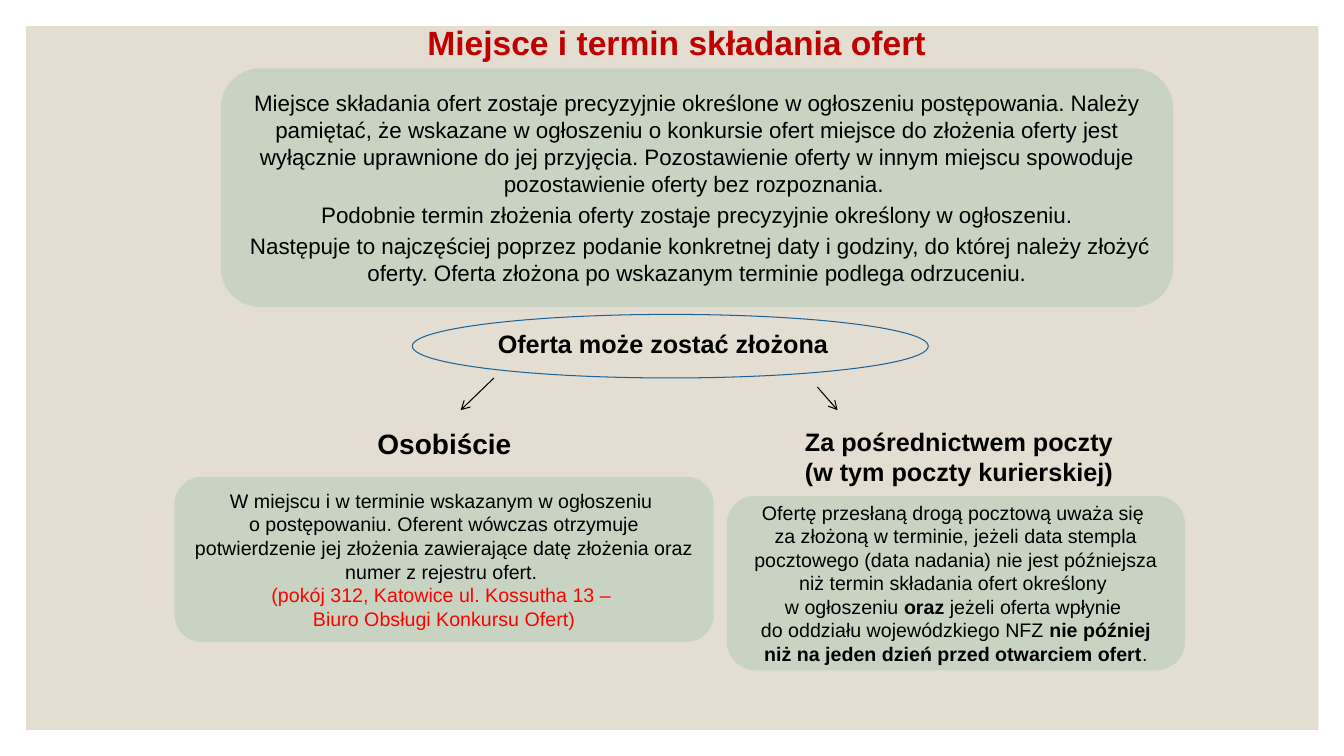
from copy import deepcopy

from lxml.etree import SubElement
from pptx import Presentation
from pptx.dml.color import RGBColor as RGB
from pptx.enum.shapes import MSO_CONNECTOR as Conn, MSO_SHAPE as Geo
from pptx.enum.text import MSO_ANCHOR as Anchor, MSO_AUTO_SIZE as Auto, PP_ALIGN as Align
from pptx.oxml.ns import qn
from pptx.util import Pt

HEX = {
    "panel": "E3DED1", "green": "339966", "blue": "1D6294",
    "title": "C00000", "red": "FF0000", "black": "000000",
}


def write(para, text, size=14, color="black", bold=False, font="Arial"):
    """Add formatted text to a paragraph, turning newlines into line breaks."""
    for num, part in enumerate(text.split("\n")):
        run = para.add_run()
        run.text = part
        run.font.name, run.font.size, run.font.bold = font, Pt(size), bold
        run.font.color.rgb = RGB.from_string(HEX[color])
        if num:
            para.add_line_break()
            gap = para._p[-1]
            gap.append(deepcopy(run._r.rPr))
            run._r.addprevious(gap)
        if not part:
            para._p.remove(run._r)


class Page:
    """Holds the slide style and draws each kind of element."""

    def __init__(self, deck):
        """Add a title-only slide to the deck."""
        self.slide = deck.slides.add_slide(deck.slide_layouts[5])
        self.shapes = self.slide.shapes

    def fill(self, frame, paras, size, align=Align.CENTER, anchor=Anchor.TOP, wrap=True):
        """Write paragraphs, each a list of (text, format) pairs, into a frame."""
        frame.word_wrap, frame.vertical_anchor = wrap, anchor
        for num, runs in enumerate(paras):
            para = frame.add_paragraph() if num else frame.paragraphs[0]
            para.alignment, para.space_before = align, Pt(size * 0.2)
            for text, style in runs:
                write(para, text, size=size, **style)

    def shape(self, geo, box, fill=None, alpha=None, line=None):
        """Draw a preset shape."""
        item = self.shapes.add_shape(geo, *map(Pt, box))
        item.shadow.inherit = False
        if fill:
            item.fill.solid()
            item.fill.fore_color.rgb = RGB.from_string(HEX[fill])
        else:
            item.fill.background()
        if alpha:
            tint = item.element.spPr.find(f"{qn('a:solidFill')}/{qn('a:srgbClr')}")
            SubElement(tint, qn("a:alpha")).set("val", str(alpha * 1000))
        if line:
            item.line.color.rgb = RGB.from_string(HEX[line])
            item.line.width = Pt(0.75)
        else:
            item.line.fill.background()
        return item

    def title(self, text, box):
        """Place and format the title."""
        item = self.shapes.title
        item.left, item.top, item.width, item.height = map(Pt, box)
        self.fill(item.text_frame, [[(text, {"color": "title", "bold": True})]], 24,
                  align=Align.LEFT, wrap=False)
        item.text_frame.auto_size = Auto.SHAPE_TO_FIT_TEXT

    def panel(self, box):
        """Draw the backdrop behind the title."""
        item = self.shape(Geo.RECTANGLE, box, fill="panel")
        self.shapes.title.element.addprevious(item.element)

    def card(self, box, paras, size=14):
        """Draw a rounded translucent card with text."""
        item = self.shape(Geo.ROUNDED_RECTANGLE, box, fill="green", alpha=15)
        self.fill(item.text_frame, paras, size, anchor=Anchor.MIDDLE)

    def oval(self, box, text):
        """Draw an outlined ellipse with a bold caption."""
        item = self.shape(Geo.OVAL, box, line="blue")
        self.fill(item.text_frame, [[(text, {"bold": True})]], 18, align=Align.LEFT)

    def label(self, box, text, size, wrap=True):
        """Add a bold centred heading."""
        frame = self.shapes.add_textbox(*map(Pt, box)).text_frame
        self.fill(frame, [[(text, {"bold": True})]], size, wrap=wrap)
        frame.auto_size = Auto.SHAPE_TO_FIT_TEXT

    def arrow(self, *ends):
        """Draw a thin arrow."""
        item = self.shapes.add_connector(Conn.STRAIGHT, *map(Pt, ends))
        item.line.color.rgb = RGB.from_string(HEX["black"])
        item.line.width = Pt(0.75)
        SubElement(item.line._get_or_add_ln(), qn("a:tailEnd")).set("type", "arrow")
        SubElement(item.element.spPr, qn("a:effectLst"))


def main():
    """Build and save the slide."""
    deck = Presentation()
    deck.slide_width, deck.slide_height = Pt(960), Pt(540)
    page = Page(deck)
    bold = {"bold": True}

    page.title("Miejsce i termin składania ofert", (298, 12.2, 381, 36))
    page.panel((18.7, 18.7, 923, 502.6))
    page.card((157.6, 48.8, 680.4, 170.6), [
        [("Miejsce składania ofert zostaje precyzyjnie określone w ogłoszeniu postępowania. "
          "Należy pamiętać, że wskazane w ogłoszeniu o konkursie ofert miejsce do złożenia "
          "oferty jest wyłącznie uprawnione do jej przyjęcia. Pozostawienie oferty w innym "
          "miejscu spowoduje pozostawienie oferty bez rozpoznania. ", {})],
        [("Podobnie termin złożenia oferty zostaje precyzyjnie określony w ogłoszeniu.", {})],
        [(" Następuje to najczęściej poprzez podanie konkretnej daty i godziny, do której "
          "należy złożyć oferty. Oferta złożona po wskazanym terminie podlega odrzuceniu.", {})],
    ], size=16)
    page.oval((294.5, 224.6, 368.6, 45.4), "Oferta może zostać złożona")

    page.label((563, 301, 244, 51), "Za pośrednictwem poczty (w tym poczty kurierskiej)", 18)
    page.label((262, 301, 111, 31.7), "Osobiście", 20, wrap=False)
    page.arrow(583.9, 276.5, 598.3, 293)
    page.arrow(352.8, 270, 329, 293)

    page.card((124.6, 340.6, 385.2, 118), [[
        ("W miejscu i w terminie wskazanym w ogłoszeniu \no postępowaniu. Oferent wówczas "
         "otrzymuje potwierdzenie jej złożenia zawierające datę złożenia oraz numer z rejestru "
         "ofert. \n", {}),
        ("(pokój 312, Katowice ul. Kossutha 13 – \nBiuro Obsługi Konkursu Ofert)",
         {"color": "red"}),
    ]])
    page.card((519, 354.2, 327.6, 124.6), [[
        ("Ofertę przesłaną drogą pocztową uważa się \nza złożoną w terminie, jeżeli data stempla "
         "pocztowego (data nadania) nie jest późniejsza niż termin składania ofert określony \n"
         "w ogłoszeniu ", {}),
        ("oraz", bold),
        (" jeżeli oferta wpłynie \ndo oddziału wojewódzkiego NFZ ", {}),
        ("nie później niż na jeden dzień przed otwarciem ofert", bold),
        (".", {}),
    ]])
    deck.save("out.pptx")


if __name__ == "__main__":
    main()
